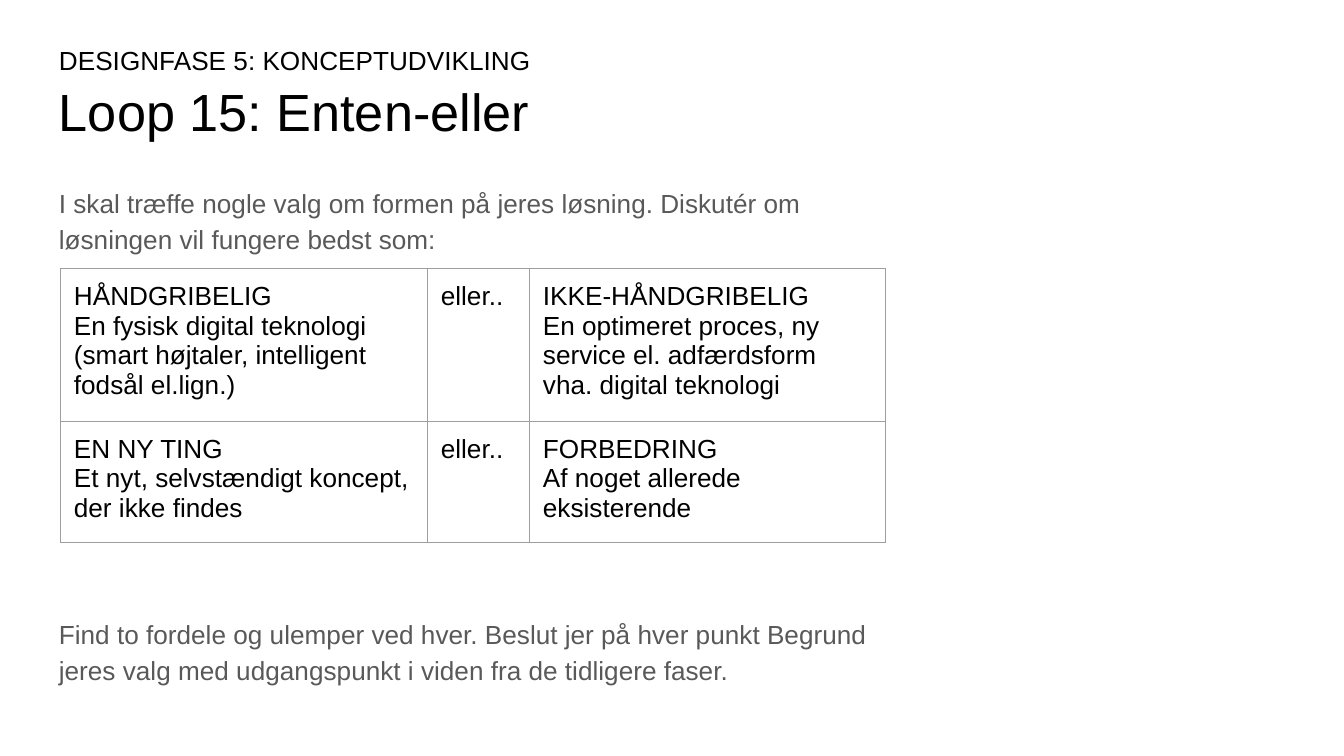
from copy import deepcopy
from dataclasses import dataclass

from lxml import etree
from pptx import Presentation
from pptx.dml.color import RGBColor
from pptx.enum.text import MSO_ANCHOR
from pptx.oxml.ns import qn
from pptx.slide import Slide
from pptx.table import _Cell
from pptx.text.text import _Paragraph
from pptx.util import Inches, Pt

TOP = MSO_ANCHOR.TOP
BLACK, GREY, BORDER = "000000", "595959", "9E9E9E"
MARGINS = {f"margin_{side}": Inches(0.1) for side in ("left", "right", "top", "bottom")}
BORDER_SIDES = ("a:lnL", "a:lnR", "a:lnT", "a:lnB")


@dataclass
class TextBlock:
    texts: list[str]
    left: float
    top: float
    width: float
    height: float
    size: float = 14
    color: str = BLACK
    line_spacing: float = 1.0
    gap: float = 0


TEXT_BLOCKS = [
    TextBlock(["Loop 15: Enten-eller"], 0.34, 0.49, 9.32, 0.63, size=28),
    TextBlock(
        [
            "I skal træffe nogle valg om formen på jeres løsning. "
            "Diskutér om løsningen vil fungere bedst som:",
            "Find to fordele og ulemper ved hver. Beslut jer på hver punkt Begrund "
            "jeres valg med udgangspunkt i viden fra de tidligere faser.",
        ],
        0.34, 1.26, 6.37, 3.74, color=GREY, line_spacing=1.15, gap=192.3,
    ),
    TextBlock(["DESIGNFASE 5: KONCEPTUDVIKLING"], 0.34, 0.23, 9.32, 0.37),
]

CHOICES = [
    (
        "HÅNDGRIBELIG\nEn fysisk digital teknologi (smart højtaler, intelligent fodsål el.lign.)",
        "eller..",
        "IKKE-HÅNDGRIBELIG\nEn optimeret proces, ny service el. adfærdsform vha. digital teknologi",
    ),
    (
        "EN NY TING\nEt nyt, selvstændigt koncept, der ikke findes",
        "eller..",
        "FORBEDRING\nAf noget allerede eksisterende",
    ),
]
COLUMN_WIDTHS = [2.73, 0.76, 2.65]
ROW_HEIGHTS = [1.07, 0.86]


def rgb(value: str) -> RGBColor:
    return RGBColor.from_string(value)


def write_paragraph(paragraph: _Paragraph, text: str, size: float, color: str) -> None:
    paragraph.text = text
    for run in paragraph.runs:
        for name, value in {"name": "Arial", "size": Pt(size)}.items():
            setattr(run.font, name, value)
        run.font.color.rgb = rgb(color)
    run_format = paragraph.runs[0]._r.rPr
    for line_break in paragraph._p.findall(qn("a:br")):
        line_break.append(deepcopy(run_format))
    etree.SubElement(paragraph._p, qn("a:endParaRPr"), sz=str(size * 100))


def add_text_block(slide: Slide, block: TextBlock) -> None:
    shape = slide.shapes.add_textbox(
        Inches(block.left), Inches(block.top), Inches(block.width), Inches(block.height)
    )
    frame = shape.text_frame
    for name, value in {"word_wrap": True, "vertical_anchor": TOP, **MARGINS}.items():
        setattr(frame, name, value)
    for index, text in enumerate(block.texts):
        paragraph = frame.add_paragraph() if index else frame.paragraphs[0]
        paragraph.line_spacing = block.line_spacing
        paragraph.space_before = Pt(block.gap if index else 0)
        write_paragraph(paragraph, text, block.size, block.color)


def add_borders(cell: _Cell) -> None:
    properties = cell._tc.get_or_add_tcPr()
    for index, side in enumerate(BORDER_SIDES):
        line = etree.Element(qn(side), w=str(Pt(0.75)))
        fill = etree.SubElement(line, qn("a:solidFill"))
        etree.SubElement(fill, qn("a:srgbClr"), val=BORDER)
        properties.insert(index, line)


def add_choice_table(slide: Slide) -> None:
    table = slide.shapes.add_table(
        len(CHOICES), len(COLUMN_WIDTHS), Inches(0.45), Inches(2),
        Inches(sum(COLUMN_WIDTHS)), Inches(sum(ROW_HEIGHTS)),
    ).table
    table.first_row = table.horz_banding = False
    for column, width in zip(table.columns, COLUMN_WIDTHS):
        column.width = Inches(width)
    for row, height, texts in zip(table.rows, ROW_HEIGHTS, CHOICES):
        row.height = Inches(height)
        for cell, text in zip(row.cells, texts):
            for name, value in {"vertical_anchor": TOP, **MARGINS}.items():
                setattr(cell, name, value)
            cell.fill.background()
            write_paragraph(cell.text_frame.paragraphs[0], text, 14, BLACK)
            add_borders(cell)


def main() -> None:
    presentation = Presentation()
    presentation.slide_width = Inches(10)
    presentation.slide_height = Inches(10) * 9 // 16
    slide = presentation.slides.add_slide(presentation.slide_layouts[6])
    for block in TEXT_BLOCKS:
        add_text_block(slide, block)
    add_choice_table(slide)
    presentation.save("out.pptx")


if __name__ == "__main__":
    main()
